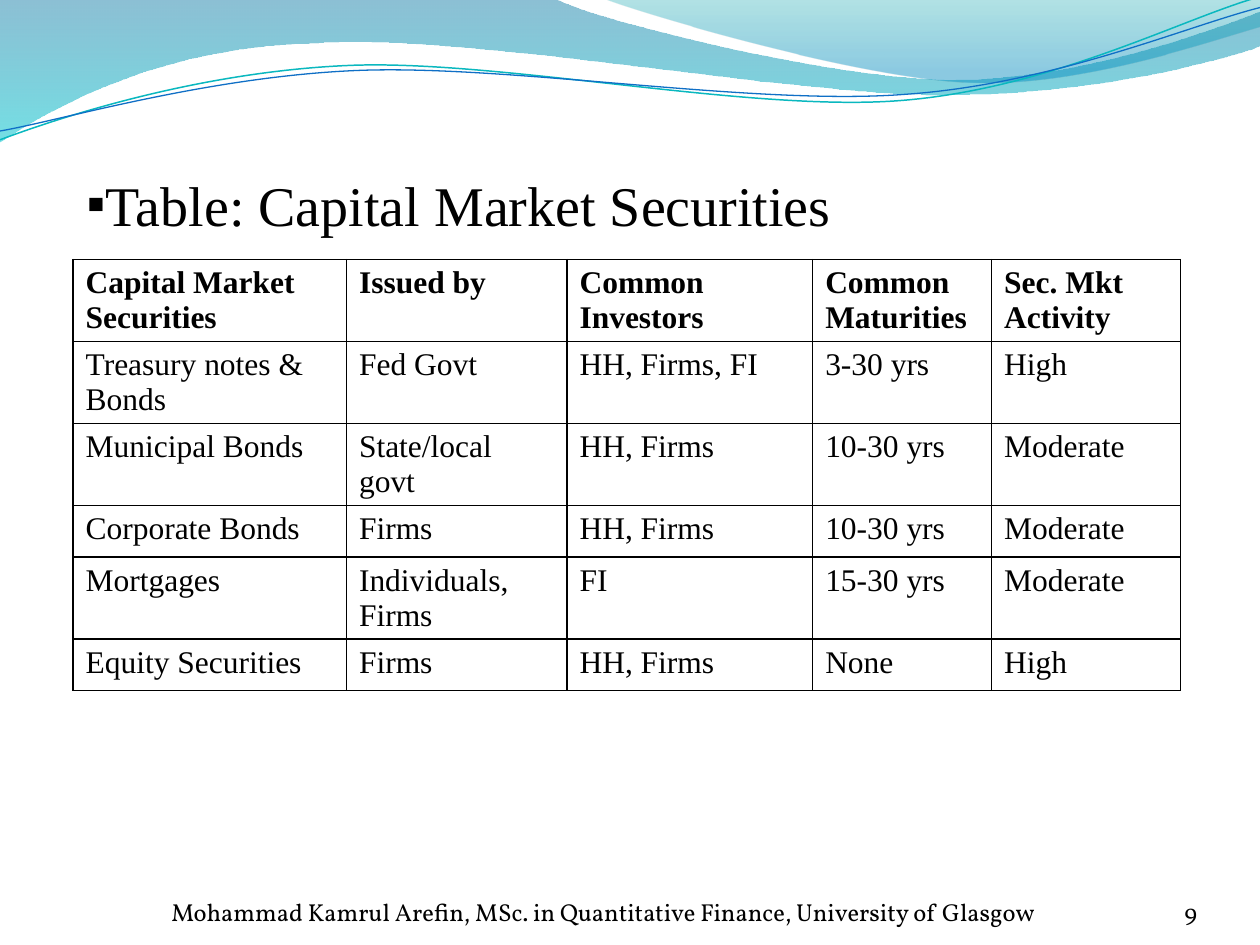
from lxml import etree
from pptx import Presentation
from pptx.dml.color import RGBColor
from pptx.enum.text import MSO_ANCHOR, PP_ALIGN
from pptx.oxml import parse_xml
from pptx.oxml.ns import nsdecls, qn
from pptx.util import Inches, Pt

CENTER, RIGHT, JUSTIFY = PP_ALIGN.CENTER, PP_ALIGN.RIGHT, PP_ALIGN.JUSTIFY
BOTTOM = MSO_ANCHOR.BOTTOM

COLORS = {
    "text": "000000",
    "band_top": "0074A1", "band_bottom": "00C6CF",
    "crest_top": "00A1A9", "crest_bottom": "008BBF",
    "teal_line": "0AB8BF", "blue_line": "0F6FC6",
}
BODY_FONT, FOOTER_FONT = "Times New Roman", "Vollkorn"

TITLE = "Table: Capital Market Securities"
FOOTER = "Mohammad Kamrul Arefin, MSc. in Quantitative Finance, University of Glasgow"
PAGE_NUMBER = "9"
TABLE_ROWS = [
    ["Capital Market\nSecurities", "Issued by", "Common Investors",
     "Common Maturities", "Sec. Mkt\nActivity"],
    ["Treasury notes & Bonds", "Fed Govt", "HH, Firms, FI", "3-30 yrs", "High"],
    ["Municipal Bonds", "State/local govt", "HH, Firms", "10-30 yrs", "Moderate"],
    ["Corporate Bonds", "Firms", "HH, Firms", "10-30 yrs", "Moderate"],
    ["Mortgages", "Individuals, Firms", "FI", "15-30 yrs", "Moderate"],
    ["Equity Securities", "Firms", "HH, Firms", "None", "High"],
]
COLUMN_WIDTHS = [2.17, 1.75, 1.95, 1.42, 1.5]
ONE_LINE, TWO_LINES = 0.41, 0.65
ROW_HEIGHTS = [TWO_LINES, TWO_LINES, TWO_LINES, ONE_LINE, TWO_LINES, ONE_LINE]

# Each outline is a list of steps: one point is a straight line, three a Bézier curve.
# Gradient stops are (position %, colour, opacity %).
WAVE_BANDS = [
    ([[(0, 0)], [(4.4, -0.01)],
      [(4.76, 0.17), (6.64, 0.63), (7.58, 0.63)],
      [(8.53, 0.63), (9.58, 0.26), (10, 0.09)], [(10.01, 0.36)],
      [(9.83, 0.44), (8.7, 0.76), (7.46, 0.75)],
      [(6.22, 0.75), (3.82, 0.28), (2.57, 0.34)],
      [(1.29, 0.36), (0.46, 0.83), (-0.01, 1.13)]],
     [(0, "band_top", 45), (100, "band_bottom", 55)]),
    ([[(4.79, -0.01)],
      [(5.09, 0.11), (6.82, 0.62), (7.69, 0.65)],
      [(8.56, 0.69), (9.61, 0.32), (10, 0.21)], [(10, 0)]],
     [(0, "crest_top", 30), (80, "crest_bottom", 45)]),
]
WAVE_LINES = [
    ([[(0, 1.11)],
      [(0.48, 0.93), (1.58, 0.57), (2.77, 0.52)],
      [(3.95, 0.47), (5.93, 0.89), (7.13, 0.8)],
      [(8.33, 0.71), (9.38, 0.15), (9.98, -0.02)]], "teal_line", 0.85),
    ([[(0, 1.04)],
      [(0.47, 0.96), (1.64, 0.61), (2.83, 0.56)],
      [(4.03, 0.51), (5.97, 0.84), (7.17, 0.75)],
      [(8.36, 0.67), (9.41, 0.21), (10, 0.06)]], "blue_line", 0.75),
]


def color(name):
    return RGBColor.from_string(COLORS[name])


def add_wave(slide, steps, close):
    """Build the outline from all points, then merge each three-point step into a curve."""
    start, *rest = [(Inches(x), Inches(y)) for step in steps for x, y in step]
    builder = slide.shapes.build_freeform(*start)
    builder.add_line_segments(rest, close=close)
    shape = builder.convert_to_shape()
    shape.shadow.inherit = False
    segments = iter(list(shape.element.spPr.iter(qn("a:lnTo"))))
    for step in steps[1:]:
        parts = [next(segments) for _ in step]
        if len(parts) == 3:
            curve = etree.Element(qn("a:cubicBezTo"))
            parts[0].addprevious(curve)
            for part in parts:
                curve.append(part[0])
                part.getparent().remove(part)
    return shape


def set_gradient(shape, stops):
    """Fill from top to bottom with partly transparent stops."""
    stop_xml = "".join(
        f'<a:gs pos="{position * 1000}"><a:srgbClr val="{COLORS[name]}">'
        f'<a:alpha val="{opacity * 1000}"/></a:srgbClr></a:gs>'
        for position, name, opacity in stops)
    shape.fill.background()
    no_fill = shape.element.spPr.find(qn("a:noFill"))
    shape.element.spPr.replace(no_fill, parse_xml(
        f'<a:gradFill {nsdecls("a")}><a:gsLst>{stop_xml}</a:gsLst>'
        '<a:lin ang="5400000" scaled="0"/></a:gradFill>'))


def format_runs(text_frame, font_name, size, bold=False):
    for paragraph in text_frame.paragraphs:
        for run in paragraph.runs:
            run.font.name = font_name
            run.font.size = Pt(size)
            run.font.bold = bold
            run.font.color.rgb = color("text")


def add_text(slide, text, box, font_name, size, alignment):
    text_frame = slide.shapes.add_textbox(*map(Inches, box)).text_frame
    text_frame.word_wrap = True
    text_frame.text = text
    text_frame.paragraphs[0].alignment = alignment
    format_runs(text_frame, font_name, size)
    return text_frame


def add_title(slide):
    text_frame = add_text(slide, TITLE, (0.33, 1.25, 9.42, 0.75), BODY_FONT, 32, JUSTIFY)
    paragraph = text_frame.paragraphs[0]
    paragraph.line_spacing = 1.1
    paragraph.space_before = Pt(6)
    properties = paragraph._p.get_or_add_pPr()
    properties.set("marL", str(Inches(0.24)))
    properties.set("indent", str(Inches(0.02)))
    etree.SubElement(properties, qn("a:buSzPct"), val="95000")
    etree.SubElement(properties, qn("a:buFont"), typeface=BODY_FONT)
    etree.SubElement(properties, qn("a:buChar"), char="▪")


def add_footer(slide, text, box, alignment):
    text_frame = add_text(slide, text, box, FOOTER_FONT, 14, alignment)
    text_frame.vertical_anchor = BOTTOM
    text_frame.margin_left = text_frame.margin_right = 0
    text_frame.margin_top = text_frame.margin_bottom = 0


def set_borders(cell):
    properties = cell._tc.get_or_add_tcPr()
    for index, side in enumerate(("lnL", "lnR", "lnT", "lnB")):
        properties.insert(index, parse_xml(
            f'<a:{side} {nsdecls("a")} w="{Pt(1)}"><a:solidFill>'
            f'<a:srgbClr val="{COLORS["text"]}"/></a:solidFill></a:{side}>'))


def add_securities_table(slide):
    table = slide.shapes.add_table(
        len(ROW_HEIGHTS), len(COLUMN_WIDTHS), Inches(0.58), Inches(2.06),
        Inches(sum(COLUMN_WIDTHS)), Inches(sum(ROW_HEIGHTS))).table
    table.first_row = table.horz_banding = False
    for column, width in zip(table.columns, COLUMN_WIDTHS):
        column.width = Inches(width)
    for row_index, (texts, height) in enumerate(zip(TABLE_ROWS, ROW_HEIGHTS)):
        table.rows[row_index].height = Inches(height)
        for column_index, text in enumerate(texts):
            cell = table.cell(row_index, column_index)
            cell.text_frame.text = text
            format_runs(cell.text_frame, BODY_FONT, 18, bold=row_index == 0)
            cell.margin_bottom = 0
            cell.fill.background()
            set_borders(cell)


def main():
    presentation = Presentation()
    presentation.slide_width, presentation.slide_height = Inches(10), Inches(7.5)
    slide = presentation.slides.add_slide(presentation.slide_layouts[6])

    for steps, stops in WAVE_BANDS:
        band = add_wave(slide, steps, close=True)
        set_gradient(band, stops)
        band.line.fill.background()
    for steps, color_name, width in WAVE_LINES:
        wave = add_wave(slide, steps, close=False)
        wave.fill.background()
        wave.line.color.rgb = color(color_name)
        wave.line.width = Pt(width)

    add_title(slide)
    add_footer(slide, PAGE_NUMBER, (8.67, 6.95, 0.83, 0.4), RIGHT)
    add_footer(slide, FOOTER, (0.58, 6.95, 8.42, 0.4), CENTER)
    add_securities_table(slide)
    presentation.save("out.pptx")


if __name__ == "__main__":
    main()
